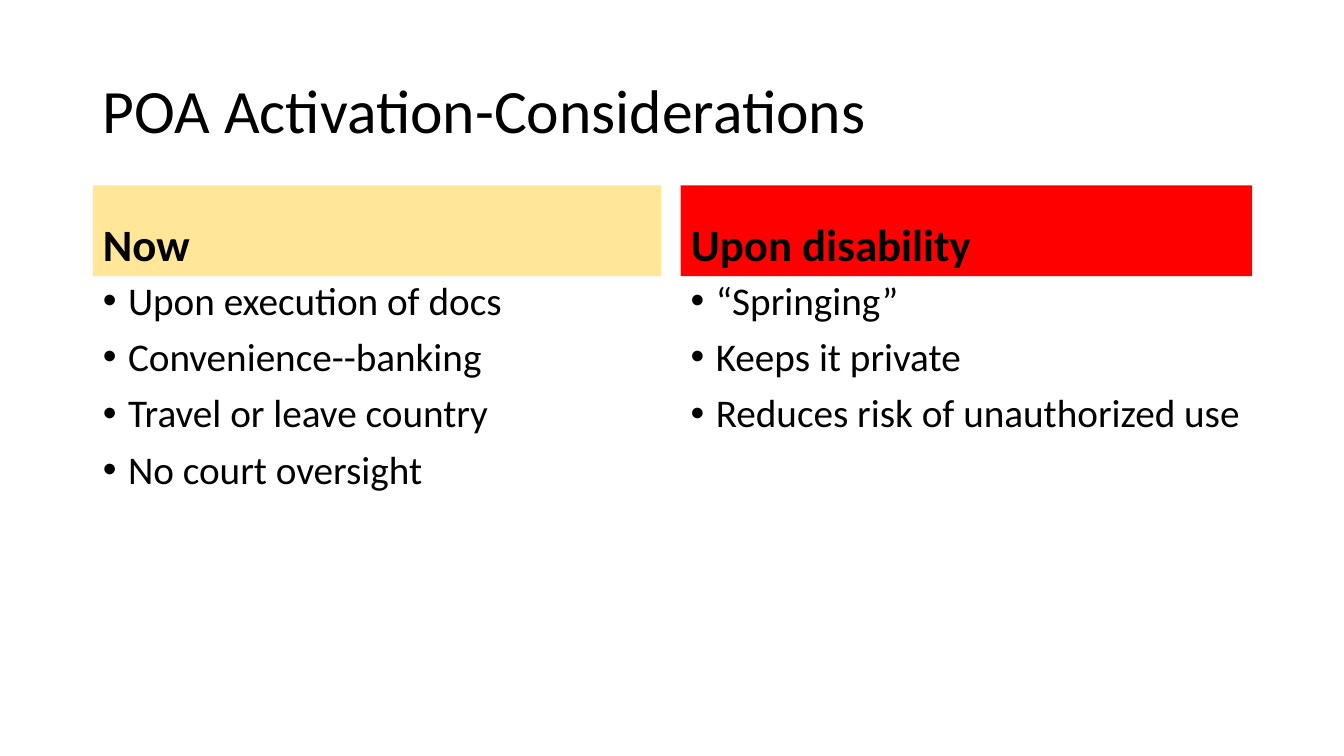
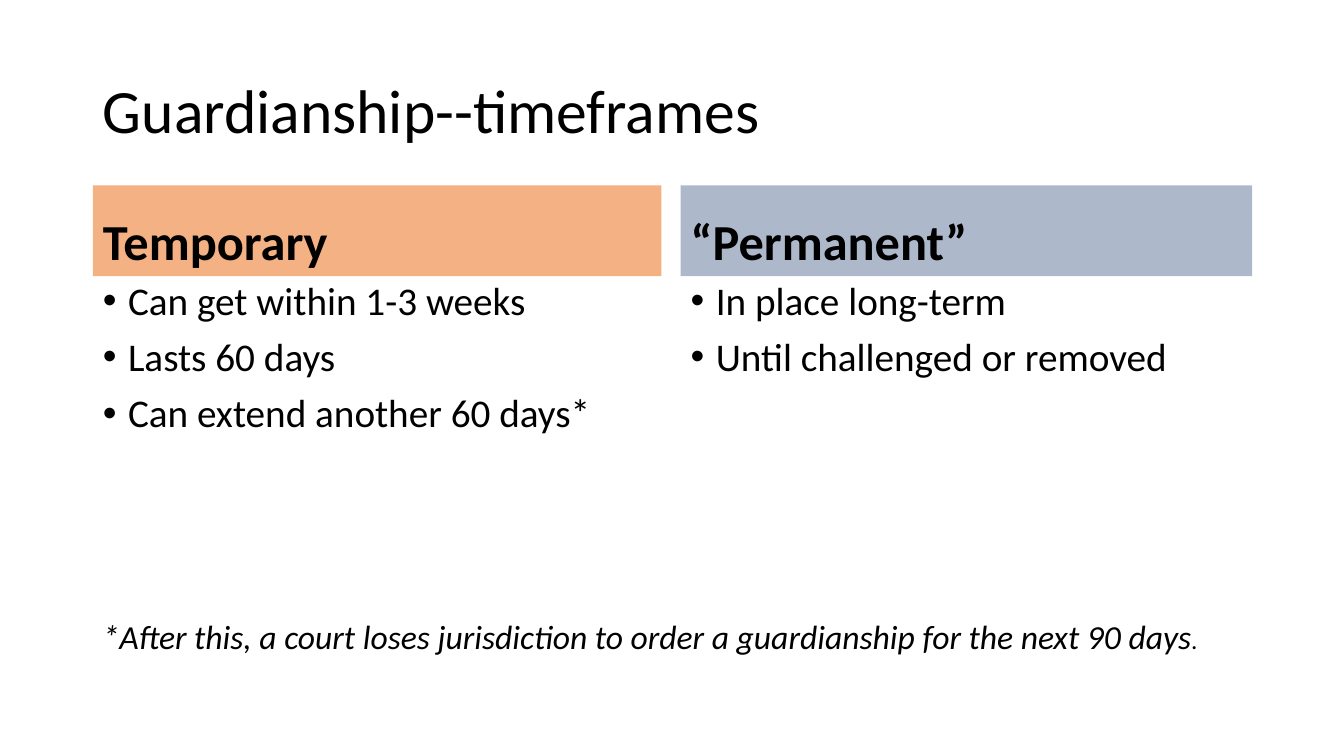
from lxml.etree import SubElement
from pptx import Presentation
from pptx.dml.color import RGBColor
from pptx.enum.text import MSO_ANCHOR, MSO_AUTO_SIZE, PP_ALIGN
from pptx.oxml.ns import qn
from pptx.util import Inches, Pt

# Shared look
FONT, INK = "Calibri", "000000"
TITLE = (0.92, 0.4, 11.5, 1.45)
COLS = ((0.92, 1.84, 5.64, 4.93), (6.75, 1.84, 5.67, 4.93))
NOTE = (0.92, 6.06, 11.36, 0.81)
BAND = 0.9
PARA = {"alignment": PP_ALIGN.LEFT, "line_spacing": 0.9, "space_before": Pt(10)}
HEAD = {**PARA, "space_before": Pt(0)}
PLAIN = {"alignment": PP_ALIGN.LEFT}

# Slide content: each column is (heading, band colour, points)
SLIDES = [
    {"title": "POA Activation-Considerations", "size": 32, "cols": [
        ("Now", "FFE699", ["Upon execution of docs", "Convenience--banking",
                           "Travel or leave country", "No court oversight"]),
        ("Upon disability", "FF0000", ["“Springing”", "Keeps it private",
                                       "Reduces risk of unauthorized use"])]},
    {"title": "Guardianship--timeframes", "size": 36, "cols": [
        ("Temporary", "F4B183", ["Can get within 1-3 weeks", "Lasts 60 days",
                                 "Can extend another 60 days*"]),
        ("“Permanent”", "ADB9CA", ["In place long-term",
                                   "Until challenged or removed"])],
     "note": [("*After this, a court loses jurisdiction to order a guardianship"
               " for the next 90 days", 24), (".", 18)]},
]


def color(code):
    return RGBColor.from_string(code)


def apply(item, values):
    for name, value in values.items():
        setattr(item, name, value)


def place(shape, box):
    names = ("left", "top", "width", "height")
    apply(shape, dict(zip(names, map(Inches, box))))


def style(run, size, bold=False, italic=False):
    apply(run.font, {"name": FONT, "size": Pt(size), "bold": bold,
                     "italic": italic})
    run.font.color.rgb = color(INK)


def fill(shape, box, lines, size, anchor, para=PARA, bold=False):
    """Place a text holder and write one paragraph per line."""
    place(shape, box)
    frame = shape.text_frame
    frame.text = "\n".join(lines)
    apply(frame, {"word_wrap": True, "auto_size": MSO_AUTO_SIZE.NONE,
                  "vertical_anchor": anchor})
    for par in frame.paragraphs:
        apply(par, para)
        style(par.runs[0], size, bold)


def bullet(par):
    props = par._p.get_or_add_pPr()
    props.set("marL", str(Inches(0.25)))
    props.set("indent", str(-Inches(0.25)))
    SubElement(props, qn("a:buFont")).set("typeface", "Arial")
    SubElement(props, qn("a:buChar")).set("char", "•")


def column(band, body, box, data, size):
    left, top, width, height = box
    head, shade, points = data
    # Coloured heading band
    fill(band, (left, top, width, BAND), [head], size, MSO_ANCHOR.BOTTOM,
         bold=True)
    band.fill.solid()
    band.fill.fore_color.rgb = color(shade)
    # Bulleted list
    fill(body, (left, top + BAND, width, height - BAND), points, 28,
         MSO_ANCHOR.TOP)
    for par in body.text_frame.paragraphs:
        bullet(par)


def footnote(slide, box, parts):
    frame = slide.shapes.add_textbox(*map(Inches, box)).text_frame
    frame.word_wrap = True
    par = frame.paragraphs[0]
    apply(par, PLAIN)
    for text, size in parts:
        run = par.add_run()
        run.text = text
        style(run, size, italic=True)


def compare(deck, data):
    """Two-column comparison with an optional footnote."""
    slide = deck.slides.add_slide(deck.slide_layouts.get_by_name("Comparison"))
    fill(slide.shapes.title, TITLE, [data["title"]], 44, MSO_ANCHOR.MIDDLE, HEAD)
    holders = list(slide.placeholders)[1:]
    pairs = zip(holders[::2], holders[1::2], COLS, data["cols"])
    for band, body, box, col in pairs:
        column(band, body, box, col, data["size"])
    if "note" in data:
        footnote(slide, NOTE, data["note"])


def main():
    deck = Presentation()
    apply(deck, {"slide_width": Inches(13.33), "slide_height": Inches(7.5)})
    for data in SLIDES:
        compare(deck, data)
    deck.save("out.pptx")


if __name__ == "__main__":
    main()
